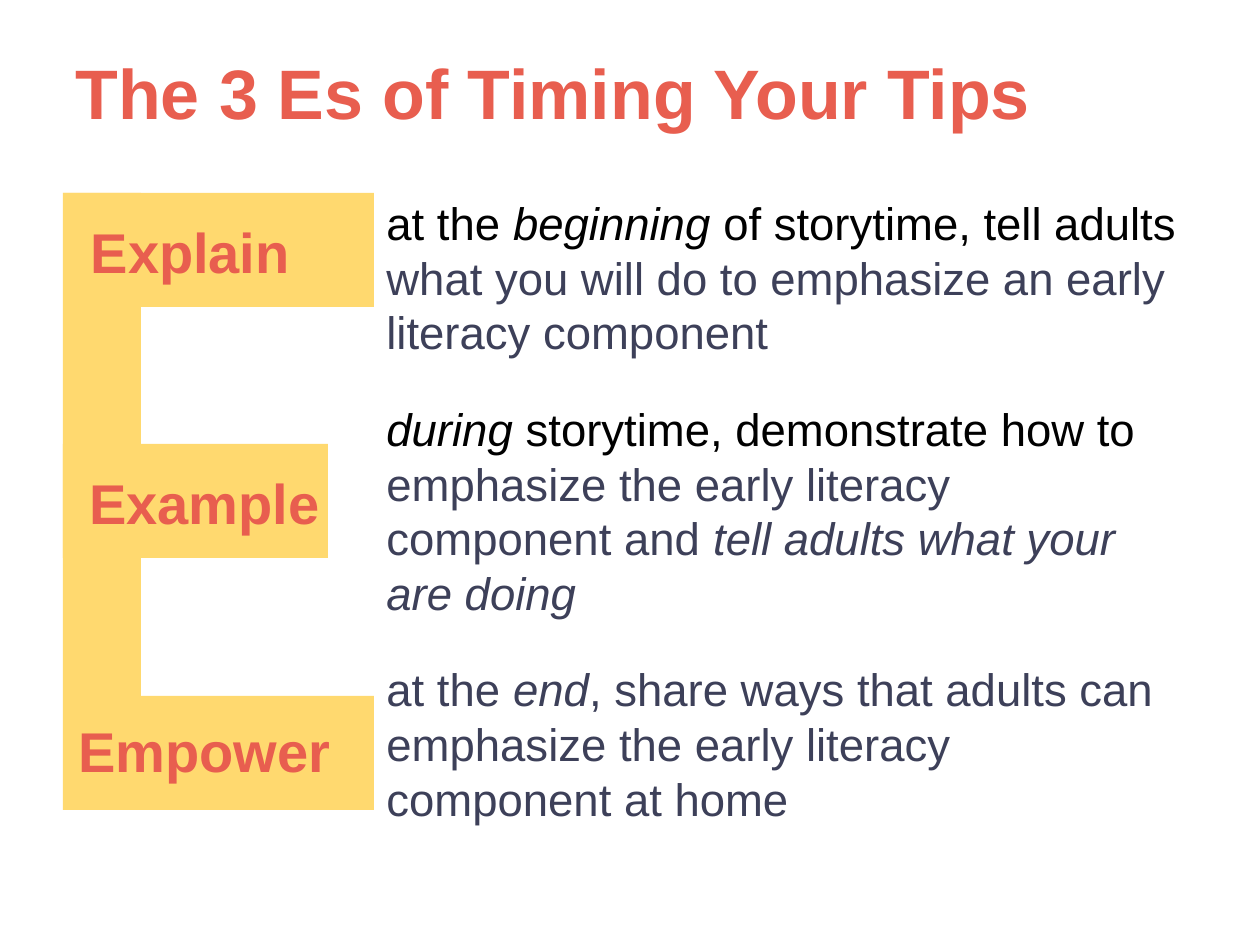
"""Build the slide on the 3 Es of timing storytime tips."""
from typing import NamedTuple

from pptx import Presentation
from pptx.dml.color import RGBColor
from pptx.enum.shapes import MSO_SHAPE
from pptx.enum.text import MSO_ANCHOR, MSO_AUTO_SIZE, PP_ALIGN
from pptx.util import Emu, Pt

EMU_PER_PX = 914400 / 126
COLORS = {"coral": "E85E4F", "yellow": "FFD96F", "black": "000000", "slate": "3D4059"}


class Box(NamedTuple):
    left: int
    top: int
    width: int
    height: int


class Phrase(NamedTuple):
    text: str
    color: str = "slate"
    italic: bool = False


class Label(NamedTuple):
    text: str
    box: Box


LETTER_BARS = [
    Box(63, 193, 311, 114),
    Box(63, 444, 265, 114),
    Box(63, 696, 311, 114),
    Box(63, 193, 78, 617),
]
LABELS = [
    Label("Explain", Box(63, 214, 280, 82)),
    Label("Example", Box(77, 465, 280, 82)),
    Label("Empower", Box(77, 713, 280, 82)),
]
TITLE_BOX = Box(63, 38, 1134, 117)
TIMING_BOX = Box(374, 185, 823, 675)
TIMINGS = [
    [
        Phrase("at the ", "black"),
        Phrase("beginning", "black", True),
        Phrase(" of storytime, tell adults ", "black"),
        Phrase("what you will do to emphasize an early literacy component"),
    ],
    [
        Phrase("during", "black", True),
        Phrase(" storytime, demonstrate how to", "black"),
        Phrase(" emphasize the early literacy component and "),
        Phrase("tell adults what your are doing", italic=True),
    ],
    [
        Phrase("at the "),
        Phrase("end", italic=True),
        Phrase(", share ways that adults can emphasize the early literacy component at home"),
    ],
]


def px(length: int) -> Emu:
    """Turn pixels into EMU."""
    return Emu(round(length * EMU_PER_PX))


def place(box: Box) -> list[Emu]:
    """Give a box's position and size in EMU."""
    return [px(length) for length in box]


def add_run(paragraph, phrase: Phrase, size: int, bold: bool = False) -> None:
    """Append one formatted run."""
    run = paragraph.add_run()
    run.text = phrase.text
    run.font.name = "Arial"
    run.font.size = Pt(size)
    run.font.bold = bold
    run.font.italic = phrase.italic
    run.font.color.rgb = RGBColor.from_string(COLORS[phrase.color])


def write_heading(frame, text: str, size: int, align: PP_ALIGN) -> None:
    """Write one bold coral line, vertically centred."""
    frame.word_wrap = True
    frame.auto_size = MSO_AUTO_SIZE.NONE
    frame.vertical_anchor = MSO_ANCHOR.MIDDLE
    line = frame.paragraphs[0]
    line.alignment = align
    line.line_spacing = 0.9
    add_run(line, Phrase(text, "coral"), size, bold=True)


def add_title(slide, text: str) -> None:
    """Move and fill the title placeholder."""
    title = slide.shapes.title
    title.left, title.top, title.width, title.height = place(TITLE_BOX)
    write_heading(title.text_frame, text, 40, PP_ALIGN.LEFT)


def add_bar(slide, box: Box) -> None:
    """Draw one bar of the big letter E."""
    bar = slide.shapes.add_shape(MSO_SHAPE.RECTANGLE, *place(box))
    bar.shadow.inherit = False
    bar.fill.solid()
    bar.fill.fore_color.rgb = RGBColor.from_string(COLORS["yellow"])
    bar.line.fill.background()


def add_label(slide, label: Label) -> None:
    """Put a word on an arm of the letter."""
    frame = slide.shapes.add_textbox(*place(label.box)).text_frame
    frame.margin_left = frame.margin_top = frame.margin_bottom = 0
    frame.margin_right = px(25)
    write_heading(frame, label.text, 32, PP_ALIGN.CENTER)


def add_timings(slide) -> None:
    """Write the explanation of each E."""
    frame = slide.shapes.add_textbox(*place(TIMING_BOX)).text_frame
    frame.word_wrap = True
    frame.margin_top = px(10)
    for index, phrases in enumerate(TIMINGS):
        paragraph = frame.add_paragraph() if index else frame.paragraphs[0]
        paragraph.line_spacing = Pt(31.2)
        paragraph.space_after = Pt(24)
        for phrase in phrases:
            add_run(paragraph, phrase, 26)


def main() -> None:
    """Build and save the presentation."""
    deck = Presentation()
    deck.slide_width, deck.slide_height = px(1260), px(945)
    slide = deck.slides.add_slide(deck.slide_layouts[5])
    add_title(slide, "The 3 Es of Timing Your Tips")
    for bar in LETTER_BARS:
        add_bar(slide, bar)
    add_timings(slide)
    for label in LABELS:
        add_label(slide, label)
    deck.save("out.pptx")


if __name__ == "__main__":
    main()
